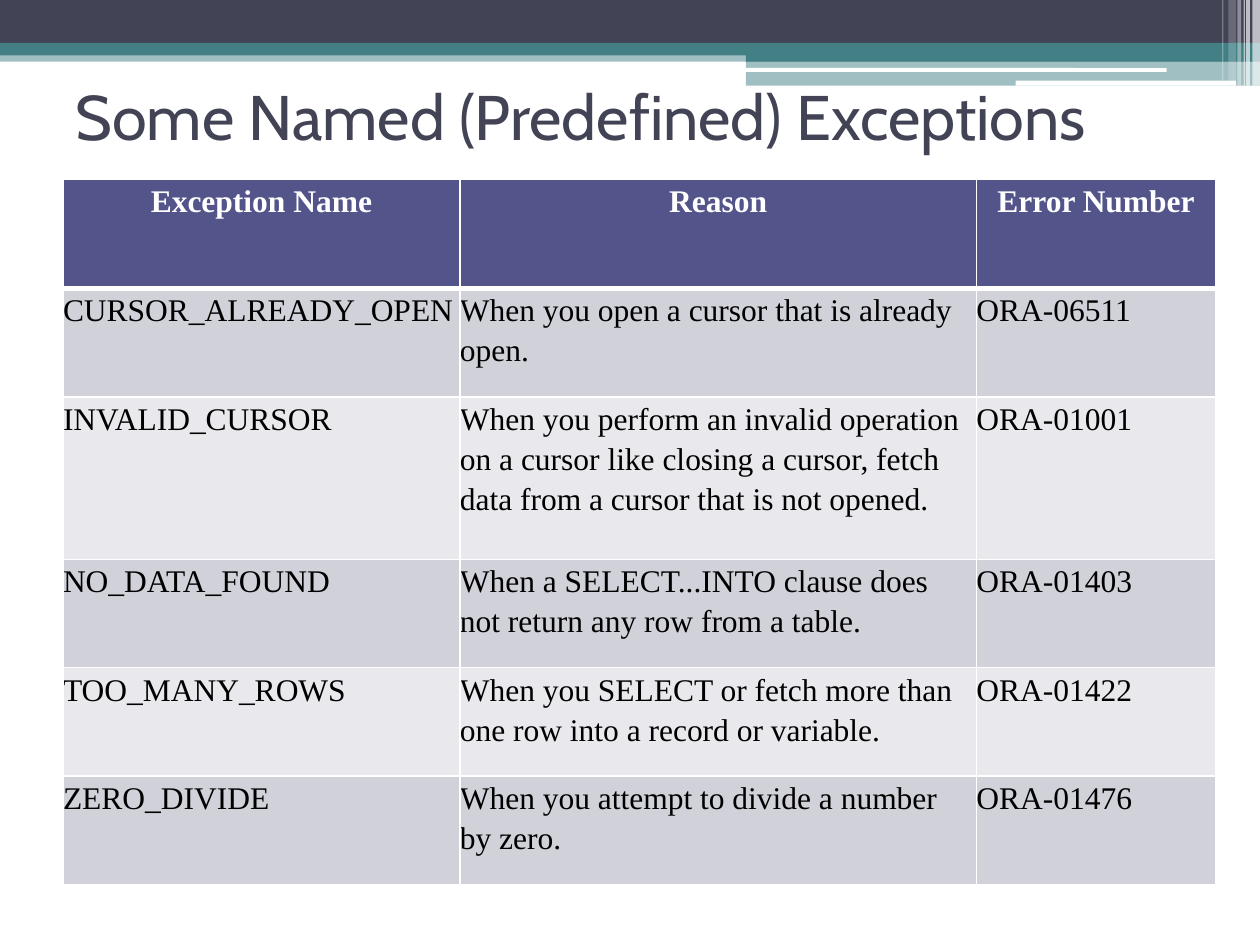
"""Build a slide that tabulates named exceptions under a banded header."""
from lxml.etree import SubElement
from pptx import Presentation
from pptx.dml.color import RGBColor
from pptx.enum.shapes import MSO_SHAPE
from pptx.enum.text import MSO_ANCHOR, PP_ALIGN
from pptx.oxml.ns import qn
from pptx.util import Inches, Pt

HUES = {"navy": "424456", "teal": "438086", "white": "FFFFFF", "black": "000000",
        "head": "53548A", "odd": "D1D1DA", "even": "E9E9ED"}


def paint(fill, hue, alpha=100):
    fill.solid()
    fill.fore_color.rgb = RGBColor.from_string(HUES[hue])
    if alpha < 100:
        color = fill._xPr.find(qn("a:solidFill"))[0]
        SubElement(color, qn("a:alpha"), val=str(alpha * 1000))


def edge(cell, side, width):
    line = SubElement(cell._tc.get_or_add_tcPr(), qn("a:ln" + side), w=str(Pt(width)))
    solid = SubElement(line, qn("a:solidFill"))
    SubElement(solid, qn("a:srgbClr"), val=HUES["white"])


deck = Presentation()
deck.slide_width, deck.slide_height = Inches(10), Inches(7.5)
slide = deck.slides.add_slide(deck.slide_layouts[5])

RECT, ROUND = MSO_SHAPE.RECTANGLE, MSO_SHAPE.ROUNDED_RECTANGLE
bands = [
    (RECT, 0, 0.4, 10, 0.09, "teal", 50),
    (RECT, 0, 0, 10, 0.34, "navy", 100),
    (RECT, 0, 0.34, 10, 0.1, "teal", 100),
    (RECT, 5.92, 0.39, 4.08, 0.1, "teal", 100),
    (RECT, 5.92, 0.48, 4.08, 0.2, "teal", 50),
    (ROUND, 5.91, 0.54, 3.35, 0.03, "white", 100),
    (ROUND, 8.06, 0.64, 1.75, 0.04, "white", 100),
]
stripes = [(9.94, 0.06, 0.68, 65), (9.89, 0.03, 0.68, 65), (9.87, 0.01, 0.68, 60),
           (9.82, 0.03, 0.68, 40), (9.75, 0.06, 0.64, 20), (9.7, 0.01, 0.64, 30)]
bands += [(RECT, left, 0, wide, high, "white", alpha) for left, wide, high, alpha in stripes]
for kind, left, top, wide, high, hue, alpha in bands:
    band = slide.shapes.add_shape(kind, *map(Inches, (left, top, wide, high)))
    band.shadow.inherit = False
    band.line.fill.background()
    paint(band.fill, hue, alpha)

title = slide.shapes.title
title.left, title.top, title.width, title.height = map(Inches, (0.5, 0.33, 9, 1.17))
title.text_frame.text = "Some Named (Predefined) Exceptions"
title.text_frame.vertical_anchor = MSO_ANCHOR.MIDDLE
head = title.text_frame.paragraphs[0]
head.alignment = PP_ALIGN.LEFT
head.font.name, head.font.size = "Cabin", Pt(36)
head.font.color.rgb = RGBColor.from_string(HUES["navy"])

rows = [
    ("Exception Name", "Reason", "Error Number"),
    ("CURSOR_ALREADY_OPEN", "When you open a cursor that is already open.", "ORA-06511"),
    ("INVALID_CURSOR", "When you perform an invalid operation on a cursor like closing a cursor, "
     "fetch data from a cursor that is not opened.", "ORA-01001"),
    ("NO_DATA_FOUND", "When a SELECT...INTO clause does not return any row from a table.",
     "ORA-01403"),
    ("TOO_MANY_ROWS", "When you SELECT or fetch more than one row into a record or variable.",
     "ORA-01422"),
    ("ZERO_DIVIDE", "When you attempt to divide a number by zero.", "ORA-01476"),
]
widths = [3.15, 4.1, 1.9]
heights = [0.87, 0.86, 1.29, 0.86, 0.86, 0.86]
table = slide.shapes.add_table(len(rows), len(widths), Inches(0.5), Inches(1.42),
                               Inches(sum(widths)), Inches(sum(heights))).table
for col, width in zip(table.columns, widths):
    col.width = Inches(width)
for r, (row, height) in enumerate(zip(rows, heights)):
    table.rows[r].height = Inches(height)
    for c, text in enumerate(row):
        cell = table.cell(r, c)
        cell.margin_left = cell.margin_right = cell.margin_top = cell.margin_bottom = 0
        for side in "LRTB":
            edge(cell, side, 3 if (r, side) in ((0, "B"), (1, "T")) else 1)
        paint(cell.fill, "head" if r == 0 else "odd" if r % 2 else "even")
        cell.text = text
        para = cell.text_frame.paragraphs[0]
        para.alignment = PP_ALIGN.LEFT if r else PP_ALIGN.CENTER
        para.line_spacing = 1.15
        para.space_after = Pt(10 if r else 0)
        para.font.name, para.font.size = "Times New Roman", Pt(18)
        para.font.bold = r == 0
        para.font.color.rgb = RGBColor.from_string(HUES["black" if r else "white"])

deck.save("out.pptx")
